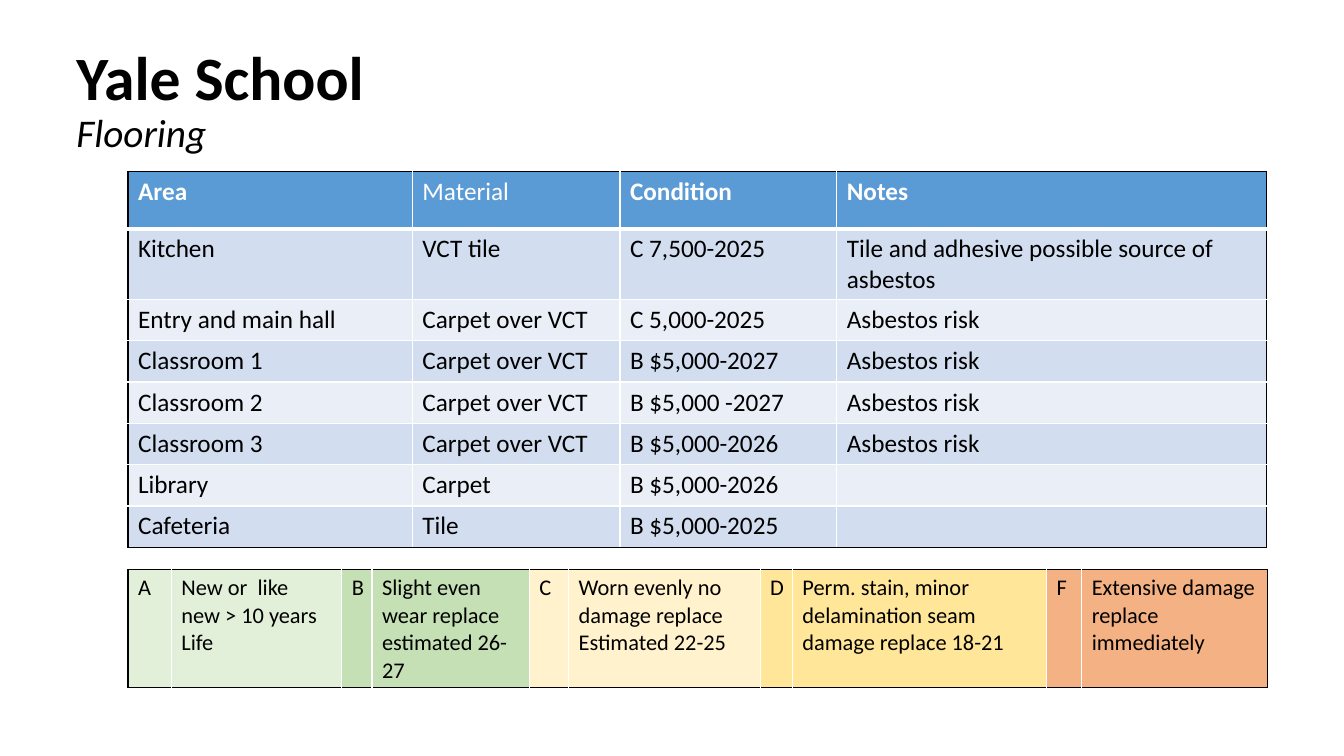
"""Build the Yale School flooring slide with its condition table and grade key."""
from dataclasses import dataclass

from pptx import Presentation
from pptx import util as u
from pptx.dml.color import RGBColor
from pptx.enum import text
from pptx.oxml import parse_xml
from pptx.oxml.ns import nsdecls

FONT = "Calibri"
BLACK, WHITE = "000000", "FFFFFF"
HEADER, BAND, LIGHT_BAND = "5B9BD5", "D2DEEF", "EAEFF7"


@dataclass
class Cell:
    text: str
    fill: str
    color: str = BLACK
    bold: bool = False


@dataclass
class Grid:
    top: float
    widths: list[float]
    heights: list[float]
    size: int
    header: bool
    rows: list[list[Cell]]


def rgb(value: str) -> RGBColor:
    return RGBColor.from_string(value)


def set_border(cell, side: str, color: str, points: float) -> None:
    cell._tc.get_or_add_tcPr().append(parse_xml(
        f'<a:ln{side} {nsdecls("a")} w="{u.Pt(points)}"><a:solidFill>'
        f'<a:srgbClr val="{color}"/></a:solidFill></a:ln{side}>'))


def fill_cell(cell, content: Cell, size: int) -> None:
    cell.fill.solid()
    cell.fill.fore_color.rgb = rgb(content.fill)
    tf = cell.text_frame
    tf.text = content.text
    for p in tf.paragraphs:
        p.font.name, p.font.size = FONT, u.Pt(size)
        p.font.color.rgb = rgb(content.color)
        for r in p.runs:
            r.font.bold = content.bold


def add_grid(s, grid: Grid) -> None:
    last_row, last_col = len(grid.rows) - 1, len(grid.widths) - 1
    table = s.shapes.add_table(
        last_row + 1, last_col + 1, u.Inches(1.27), u.Inches(grid.top),
        u.Inches(sum(grid.widths)), u.Inches(sum(grid.heights))).table
    table.first_row, table.horz_banding = grid.header, False
    for column, width in zip(table.columns, grid.widths):
        column.width = u.Inches(width)
    for row, height in zip(table.rows, grid.heights):
        row.height = u.Inches(height)
    for i, row in enumerate(grid.rows):
        for j, content in enumerate(row):
            cell = table.cell(i, j)
            outer = {"L": j == 0, "R": j == last_col, "T": i == 0, "B": i == last_row}
            for side, is_outer in outer.items():
                thick = grid.header and i == 0 and side == "B"
                set_border(cell, side, BLACK if is_outer else WHITE, 3 if thick else 1)
            fill_cell(cell, content, grid.size)


def add_title(s, title: str, subtitle: str) -> None:
    sp = s.shapes.add_textbox(u.Inches(0.66), u.Inches(0.28), u.Inches(11.5), u.Inches(1.45))
    tf = sp.text_frame
    tf.word_wrap = True
    tf.vertical_anchor = text.MSO_ANCHOR.MIDDLE
    p = tf.paragraphs[0]
    p.line_spacing = 0.9
    p.font.name = FONT
    p.font.color.rgb = rgb(BLACK)
    r = p.add_run()
    r.text, r.font.size, r.font.bold = title, u.Pt(44), True
    p.add_line_break()
    r = p.add_run()
    r.text, r.font.size, r.font.italic = subtitle, u.Pt(28), True


AREAS = [
    ("Kitchen", "VCT tile", "C 7,500-2025", "Tile and adhesive possible source of asbestos"),
    ("Entry and main hall", "Carpet over VCT", "C 5,000-2025", "Asbestos risk"),
    ("Classroom 1", "Carpet over VCT", "B $5,000-2027", "Asbestos risk"),
    ("Classroom 2", "Carpet over VCT", "B $5,000 -2027", "Asbestos risk"),
    ("Classroom 3", "Carpet over VCT", "B $5,000-2026", "Asbestos risk"),
    ("Library", "Carpet", "B $5,000-2026", ""),
    ("Cafeteria", "Tile", "B $5,000-2025", ""),
]
GRADES = [
    ("A", "New or  like\nnew > 10 years\nLife", "E2F0D9"),
    ("B", "Slight even wear replace estimated 26-27", "C5E0B4"),
    ("C", "Worn evenly no damage replace\nEstimated 22-25", "FFF2CC"),
    ("D", "Perm. stain, minor delamination seam damage replace 18-21", "FFE699"),
    ("F", "Extensive damage replace immediately", "F4B183"),
]


def main() -> None:
    prs = Presentation()
    prs.slide_width, prs.slide_height = u.Inches(13.33), u.Inches(7.5)
    s = prs.slides.add_slide(prs.slide_layouts[6])
    add_title(s, "Yale School", "Flooring")

    header = [Cell(name, HEADER, WHITE, name != "Material")
              for name in ("Area", "Material", "Condition", "Notes")]
    body = [[Cell(value, LIGHT_BAND if i % 2 else BAND) for value in area]
            for i, area in enumerate(AREAS)]
    add_grid(s, Grid(1.7, [2.82, 2.06, 2.15, 4.26], [0.57] + [0.41] * len(AREAS),
                     18, True, [header] + body))

    key = [Cell(value, fill) for grade, meaning, fill in GRADES for value in (grade, meaning)]
    add_grid(s, Grid(5.65, [0.43, 1.69, 0.3, 1.56, 0.39, 1.9, 0.32, 2.52, 0.35, 1.84],
                     [0.95], 16, False, [key]))
    prs.save("out.pptx")


if __name__ == "__main__":
    main()
